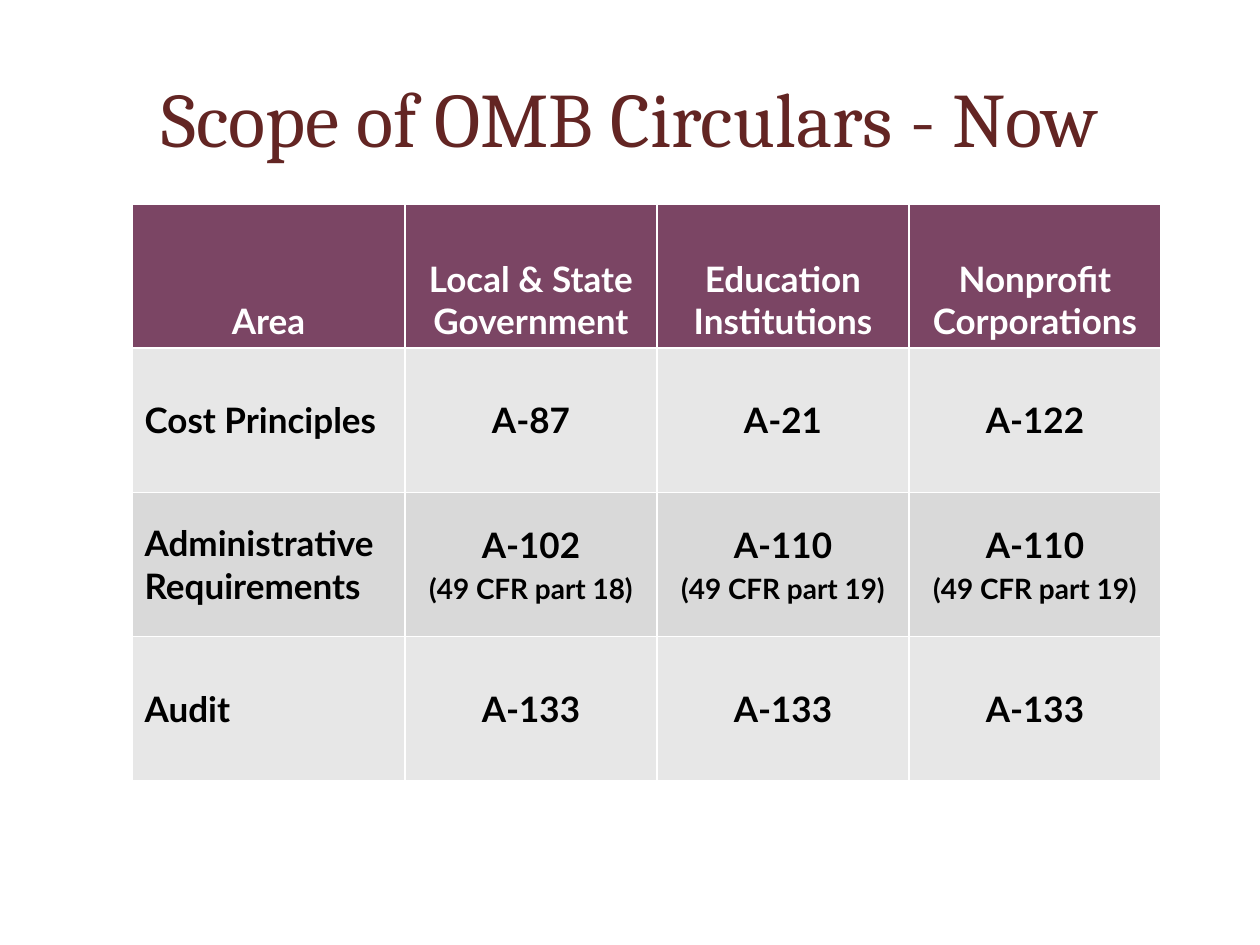
from dataclasses import dataclass

from pptx import Presentation
from pptx.dml.color import RGBColor
from pptx.enum.text import MSO_ANCHOR, PP_ALIGN
from pptx.util import Pt


@dataclass(frozen=True)
class Theme:
    title: str = "632523"
    head: str = "7B4564"
    light: str = "E7E7E7"
    dark: str = "D9D9D9"
    white: str = "FFFFFF"
    black: str = "000000"
    serif: str = "Cambria"
    sans: str = "Lato"
    big: int = 44
    body: int = 20
    small: int = 16


THEME = Theme()
SCALE = 914400 / 126

HEADS = ["Area", "Local & State Government", "Education Institutions",
         "Nonprofit Corporations"]
ROWS = [
    ["Cost Principles", "A-87", "A-21", "A-122"],
    ["Administrative Requirements", ("A-102", "(49 CFR part 18)"),
     ("A-110", "(49 CFR part 19)"), ("A-110", "(49 CFR part 19)")],
    ["Audit", "A-133", "A-133", "A-133"],
]


def px(count):
    return round(count * SCALE)


def write(para, text, face, size, color, bold=False):
    run = para.add_run()
    run.text = text
    font = run.font
    font.name = face
    font.size = Pt(size)
    font.bold = bold
    font.color.rgb = RGBColor.from_string(color)


def add_title(slide, box, text):
    frame = slide.shapes.add_textbox(*map(px, box)).text_frame
    frame.word_wrap = True
    frame.vertical_anchor = MSO_ANCHOR.MIDDLE
    para = frame.paragraphs[0]
    para.alignment = PP_ALIGN.CENTER
    write(para, text, THEME.serif, THEME.big, THEME.title)


def fill_cell(cell, lines, align, anchor, fill, color):
    cell.fill.solid()
    cell.fill.fore_color.rgb = RGBColor.from_string(fill)
    cell.vertical_anchor = anchor
    frame = cell.text_frame
    for index, line in enumerate(lines):
        para = frame.add_paragraph() if index else frame.paragraphs[0]
        para.alignment = align
        size = THEME.small if index else THEME.body
        if index:
            para.space_before = Pt(0.2 * size)
        write(para, line, THEME.sans, size, color, True)


def add_grid(slide, box, first, heads, rows):
    data = [heads, *rows]
    table = slide.shapes.add_table(len(data), len(heads), *map(px, box)).table
    rest = (box[2] - first) / (len(heads) - 1)
    for index, column in enumerate(table.columns):
        column.width = px(rest if index else first)
    for top, (row, values) in enumerate(zip(table.rows, data)):
        row.height = px(box[3] / len(data))
        fill = (THEME.light if top % 2 else THEME.dark) if top else THEME.head
        color = THEME.black if top else THEME.white
        anchor = MSO_ANCHOR.MIDDLE if top else MSO_ANCHOR.BOTTOM
        for left, value in enumerate(values):
            lines = (value,) if isinstance(value, str) else value
            label = top and not left
            align = PP_ALIGN.LEFT if label else PP_ALIGN.CENTER
            fill_cell(row.cells[left], lines, align, anchor, fill, color)


def main():
    deck = Presentation()
    deck.slide_width = px(1260)
    deck.slide_height = px(945)
    slide = deck.slides.add_slide(deck.slide_layouts[6])
    add_title(slide, (63, 38, 1134, 157), "Scope of OMB Circulars - Now")
    add_grid(slide, (132, 204, 1029, 577), 273, HEADS, ROWS)
    deck.save("out.pptx")


if __name__ == "__main__":
    main()
